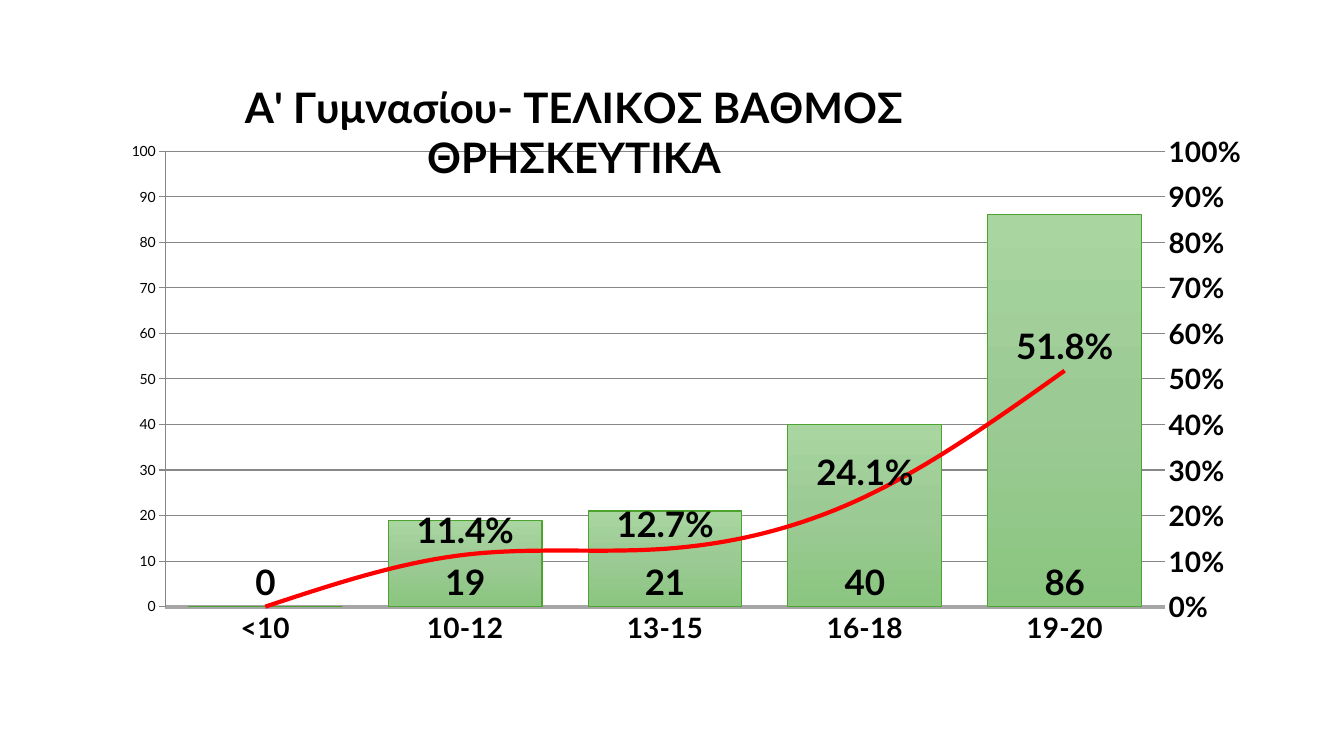
from copy import deepcopy

from lxml import etree
from pptx import Presentation
from pptx.chart.axis import ValueAxis
from pptx.chart.data import CategoryChartData
from pptx.dml.color import RGBColor
from pptx.enum.chart import XL_CHART_TYPE, XL_LABEL_POSITION, XL_MARKER_STYLE, XL_TICK_MARK
from pptx.oxml import parse_xml
from pptx.oxml.ns import nsdecls, qn
from pptx.util import Pt

COLUMN = XL_CHART_TYPE.COLUMN_CLUSTERED
BASE = XL_LABEL_POSITION.INSIDE_BASE
ABOVE = XL_LABEL_POSITION.ABOVE
BARE = XL_MARKER_STYLE.NONE
NO_TICK = XL_TICK_MARK.NONE


class Theme:
    face = "Lato"
    ink = RGBColor.from_string("000000")
    axis = RGBColor.from_string("A6A6A6")
    grid = RGBColor.from_string("D9D9D9")
    edge = RGBColor.from_string("4CA32D")
    curve = RGBColor.from_string("FF0000")
    fade = [(0, "A8D5A0"), (0.5, "9CCA94"), (1, "8AC680")]
    base, tick, label, title = Pt(10), Pt(20), Pt(25), Pt(30)
    thin, thick = Pt(0.75), Pt(3)


TITLE = "Α' Γυμνασίου- ΤΕΛΙΚΟΣ ΒΑΘΜΟΣ ΘΡΗΣΚΕΥΤΙΚΑ"
GRADES = ["<10", "10-12", "13-15", "16-18", "19-20"]
COUNTS = [0, 19, 21, 40, 86]
SHARES = [0, 0.114, 0.127, 0.241, 0.518]


def style(font, size, bold=True):
    font.name, font.size, font.bold = Theme.face, size, bold
    font.color.rgb = Theme.ink


def stroke(line, color, width):
    line.color.rgb, line.width = color, width


def place(layout, x, y, w=None, h=None):
    """Fill a layout element with fractions of the chart area."""
    box = etree.SubElement(layout, qn("c:manualLayout"))
    rows = [("xMode", "edge"), ("yMode", "edge"), ("x", x), ("y", y)]
    if w:
        rows = [("layoutTarget", "inner")] + rows + [("w", w), ("h", h)]
    for tag, val in rows:
        etree.SubElement(box, qn("c:" + tag)).set("val", str(val))


def add_title(chart):
    frame = chart.chart_title.text_frame
    run = frame.paragraphs[0].add_run()
    run.text = TITLE
    style(run.font, Theme.title)
    place(chart.chart_title._element.find(qn("c:layout")), 0.125, 0.03)


def set_axis(axis, line=True):
    axis.major_tick_mark = axis.minor_tick_mark = NO_TICK
    style(axis.tick_labels.font, Theme.tick)
    if line:
        stroke(axis.format.line, Theme.axis, Theme.thick)
    else:
        axis.format.line.fill.background()


def set_scale(axis, top, step):
    axis.minimum_scale, axis.maximum_scale, axis.major_unit = 0, top, step


def add_labels(series, spot, form):
    tags = series.data_labels
    tags.show_value = True
    tags.position = spot
    tags.number_format, tags.number_format_is_linked = form, False
    style(tags.font, Theme.label)
    return tags


def split_line(chart):
    """Move the second series to a line plot on its own axes; return its value axis."""
    area = chart._chartSpace.chart.plotArea
    bars = area.find(qn("c:barChart"))
    ser = bars.findall(qn("c:ser"))[1]
    flip = ser.find(qn("c:invertIfNegative"))
    if flip is not None:
        ser.remove(flip)
    plot = parse_xml(
        f'<c:lineChart {nsdecls("c")}><c:grouping val="standard"/><c:varyColors val="0"/>'
        '<c:marker val="1"/><c:axId val="501"/><c:axId val="502"/></c:lineChart>')
    plot.insert(2, ser)
    bars.addnext(plot)

    left, cats = area.find(qn("c:valAx")), area.find(qn("c:catAx"))
    right, under = deepcopy(left), deepcopy(cats)
    left.addnext(right)
    right.addnext(under)
    for axis, own, other in ((under, "501", "502"), (right, "502", "501")):
        axis.find(qn("c:axId")).set("val", own)
        axis.find(qn("c:crossAx")).set("val", other)
    under.find(qn("c:delete")).set("val", "1")
    right.find(qn("c:axPos")).set("val", "r")
    right.find(qn("c:crosses")).set("val", "max")
    return ValueAxis(right)


def paint_bars(plot):
    plot.gap_width, plot.vary_by_categories = 30, False
    bars = plot.series[0]
    fill = bars.format.fill
    fill.gradient()
    fill.gradient_angle = 270
    stops = fill._fill._gradFill.find(qn("a:gsLst"))
    stops.insert(1, deepcopy(stops[0]))
    for stop, (spot, color) in zip(fill.gradient_stops, Theme.fade):
        stop.position = spot
        stop.color.rgb = RGBColor.from_string(color)
    stroke(bars.format.line, Theme.edge, Theme.thin)
    add_labels(bars, BASE, "General")


def paint_curve(plot):
    curve = plot.series[0]
    curve.smooth = True
    curve.marker.style = BARE
    stroke(curve.format.line, Theme.curve, Theme.thick)
    tags = add_labels(curve, ABOVE, "0.0%")
    # The zero share carries no label
    tags._element.insert(0, parse_xml(
        f'<c:dLbl {nsdecls("c")}><c:idx val="0"/><c:delete val="1"/></c:dLbl>'))


def add_grades(slide, x, y, w, h):
    data = CategoryChartData()
    data.categories = GRADES
    data.add_series("Series 1", COUNTS)
    data.add_series("Series 2", SHARES)
    chart = slide.shapes.add_chart(COLUMN, x, y, w, h, data).chart
    chart.has_legend = False
    chart.has_title = True
    style(chart.font, Theme.base, False)
    add_title(chart)

    # Plot area
    area = chart._chartSpace.chart.plotArea
    layout = area.find(qn("c:layout"))
    if layout is None:
        layout = etree.Element(qn("c:layout"))
        area.insert(0, layout)
    place(layout, 0.063, 0.159, 0.862, 0.723)

    # Axes
    right = split_line(chart)
    left = chart.value_axis
    set_axis(chart.category_axis)
    set_axis(left)
    set_axis(right, line=False)
    set_scale(left, 166, 20)
    set_scale(right, 1, 0.1)
    left.has_major_gridlines = True
    stroke(left.major_gridlines.format.line, Theme.grid, Theme.thin)
    right.has_major_gridlines = False
    right.tick_labels.number_format = "0%"
    right.tick_labels.number_format_is_linked = False

    # Series
    bars, line = chart.plots
    paint_bars(bars)
    paint_curve(line)


def main():
    deck = Presentation()
    deck.slide_width, deck.slide_height = Pt(960), Pt(540)
    slide = deck.slides.add_slide(deck.slide_layouts[6])
    add_grades(slide, Pt(66), Pt(36.5), Pt(828), Pt(450))
    deck.save("out.pptx")


if __name__ == "__main__":
    main()
